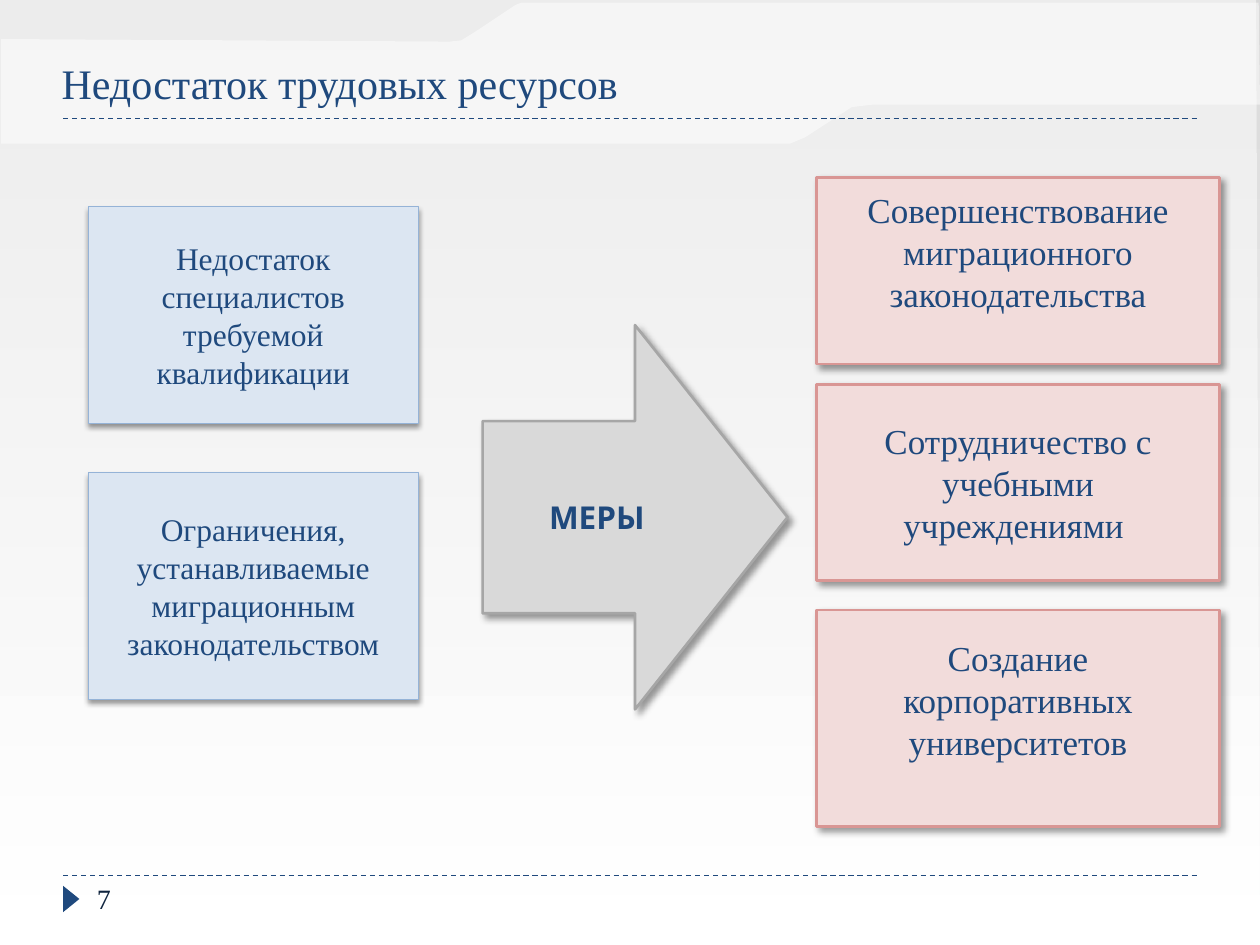
from pptx import Presentation
from pptx.dml.color import RGBColor
from pptx.enum import dml, shapes, text
from pptx.oxml import parse_xml
from pptx.oxml.ns import nsdecls, qn
from pptx.util import Inches, Pt

NAVY = RGBColor(0x1F, 0x49, 0x7D)
DARK = RGBColor(0x0F, 0x24, 0x3E)
WHITE = RGBColor(0xFF, 0xFF, 0xFF)
GREY = RGBColor(0xD9, 0xD9, 0xD9)
EDGE = RGBColor(0xA6, 0xA6, 0xA6)
BLUE = RGBColor(0xDC, 0xE6, 0xF2)
SKY = RGBColor(0x95, 0xB3, 0xD7)
PINK = RGBColor(0xF2, 0xDC, 0xDB)
ROSE = RGBColor(0xD9, 0x96, 0x94)
SERIF = "Times New Roman"
SANS = "Cabin"

# Shadow settings: blur and distance in points, angle in degrees
SOFT = (3, 2, 90)
DEEP = (4, 3, 45)

SHEET = [(-0.02, 7.49), (10, 7.5), (9.97, 0), (-0.03, 0)]
BAND = [(9.99, 0.02), (4.27, 0.02), (4.14, 0.02), (4.09, 0.04), (3.79, 0.24),
        (3.71, 0.29), (3.66, 0.32), (3.57, 0.33), (1.88, 0.32), (0.01, 0.31),
        (0.01, 1.14), (6.27, 1.14), (6.39, 1.09), (6.76, 0.85), (6.93, 0.83),
        (10, 0.83)]


def write(frame, words, size, color, font=SERIF, bold=False):
    frame.word_wrap = True
    para = frame.paragraphs[0]
    para.text = words
    para.font.size, para.font.name, para.font.bold = Pt(size), font, bold
    para.font.color.rgb = color
    return para


def add_label(slide, box, words, size, color):
    frame = slide.shapes.add_textbox(*map(Inches, box)).text_frame
    return frame, write(frame, words, size, color)


def add_veil(slide, points):
    """Half-transparent white outline."""
    spots = [(Inches(x), Inches(y)) for x, y in points]
    pen = slide.shapes.build_freeform(*spots[0])
    pen.add_line_segments(spots[1:], close=True)
    veil = pen.convert_to_shape()
    veil.shadow.inherit = False
    veil.line.fill.background()
    veil.fill.solid()
    veil.fill.fore_color.rgb = WHITE
    tint = veil.fill._xPr.find(qn("a:solidFill"))[0]
    tint.append(parse_xml(f'<a:alpha {nsdecls("a")} val="50000"/>'))


def add_rule(slide, left, top, width):
    rule = slide.shapes.add_connector(
        shapes.MSO_CONNECTOR.STRAIGHT, Inches(left), Inches(top),
        Inches(left + width), Inches(top))
    rule.line.color.rgb = NAVY
    rule.line.width = Pt(0.75)
    rule.line.dash_style = dml.MSO_LINE.DASH
    rule._element.spPr.append(parse_xml(f'<a:effectLst {nsdecls("a")}/>'))


def add_card(slide, kind, box, fill, edge, width, shade):
    card = slide.shapes.add_shape(kind, *map(Inches, box))
    card.fill.solid()
    card.fill.fore_color.rgb = fill
    card.line.color.rgb = edge
    card.line.width = Pt(width)
    card.shadow.inherit = False
    blur, dist, angle = shade
    card._element.spPr.find(qn("a:effectLst")).append(parse_xml(
        f'<a:outerShdw {nsdecls("a")} blurRad="{Pt(blur)}" dist="{Pt(dist)}" '
        f'dir="{angle * 60000}" rotWithShape="0"><a:srgbClr val="000000">'
        '<a:alpha val="40000"/></a:srgbClr></a:outerShdw>'))
    card.text_frame.vertical_anchor = text.MSO_ANCHOR.MIDDLE
    return card.text_frame


def add_backdrop(slide):
    fill = slide.background.fill
    fill.gradient()
    fill.gradient_angle = 270
    for stop, color, place in zip(fill.gradient_stops, (GREY, WHITE), (0, 1)):
        stop.color.rgb = color
        stop.position = place
    add_veil(slide, SHEET)
    add_veil(slide, BAND)


def add_header(slide, left, top, width, height):
    add_rule(slide, left, top + height, width)
    frame, para = add_label(slide, (left - 0.11, top, 8.44, height - 0.03),
                            "Недостаток трудовых ресурсов", 24, NAVY)
    frame.vertical_anchor = text.MSO_ANCHOR.BOTTOM
    para.line_spacing = 0.85


def add_footer(slide, left, top, width):
    add_rule(slide, left, top, width)
    mark = slide.shapes.add_shape(
        shapes.MSO_SHAPE.ISOSCELES_TRIANGLE, Inches(left - 0.04),
        Inches(top + 0.12), Inches(0.21), Inches(0.13))
    mark.rotation = 90
    mark.shadow.inherit = False
    mark.fill.solid()
    mark.fill.fore_color.rgb = NAVY
    mark.line.fill.background()
    add_label(slide, (left + 0.17, top, 2.17, 0.4), "7", 16, DARK)


def add_causes(slide, left, top, width):
    causes = [
        (0, 1.72, "Недостаток специалистов требуемой квалификации"),
        (2.11, 1.8, "Ограничения, устанавливаемые миграционным законодательством"),
    ]
    for drop, height, words in causes:
        frame = add_card(slide, shapes.MSO_SHAPE.RECTANGLE,
                         (left, top + drop, width, height), BLUE, SKY, 0.75, SOFT)
        frame.margin_top = frame.margin_bottom = Inches(0.1)
        para = write(frame, words, 18, NAVY)
        para.alignment = text.PP_ALIGN.CENTER


def add_measures(slide, left, top, width):
    # Drop, height, room kept free below the text, wording
    measures = [
        (0, 1.48, 0.3, "Совершенствование миграционного законодательства"),
        (1.64, 1.56, 0, "Сотрудничество с учебными учреждениями "),
        (3.43, 1.72, 0.3, "Создание корпоративных университетов"),
    ]
    for drop, height, room, words in measures:
        frame = add_card(slide, shapes.MSO_SHAPE.RECTANGLE,
                         (left, top + drop, width, height), PINK, ROSE, 1.5, DEEP)
        frame.margin_bottom = Inches(0.05 + room)
        para = write(frame, words, 20, NAVY)
        para.alignment = text.PP_ALIGN.CENTER


def add_arrow(slide, *box):
    frame = add_card(slide, shapes.MSO_SHAPE.RIGHT_ARROW, box,
                     GREY, EDGE, 1.5, DEEP)
    para = write(frame, "МЕРЫ", 18, NAVY, SANS, True)
    para.alignment = text.PP_ALIGN.CENTER


def main():
    deck = Presentation()
    deck.slide_width, deck.slide_height = Inches(10), Inches(7.5)
    slide = deck.slides.add_slide(deck.slide_layouts[6])
    add_backdrop(slide)
    add_header(slide, 0.5, 0, 9, 0.94)
    add_footer(slide, 0.5, 6.95, 9)
    add_causes(slide, 0.7, 1.64, 2.62)
    add_measures(slide, 6.48, 1.41, 3.2)
    add_arrow(slide, 3.83, 2.58, 2.42, 3.05)
    deck.save("out.pptx")


if __name__ == "__main__":
    main()
